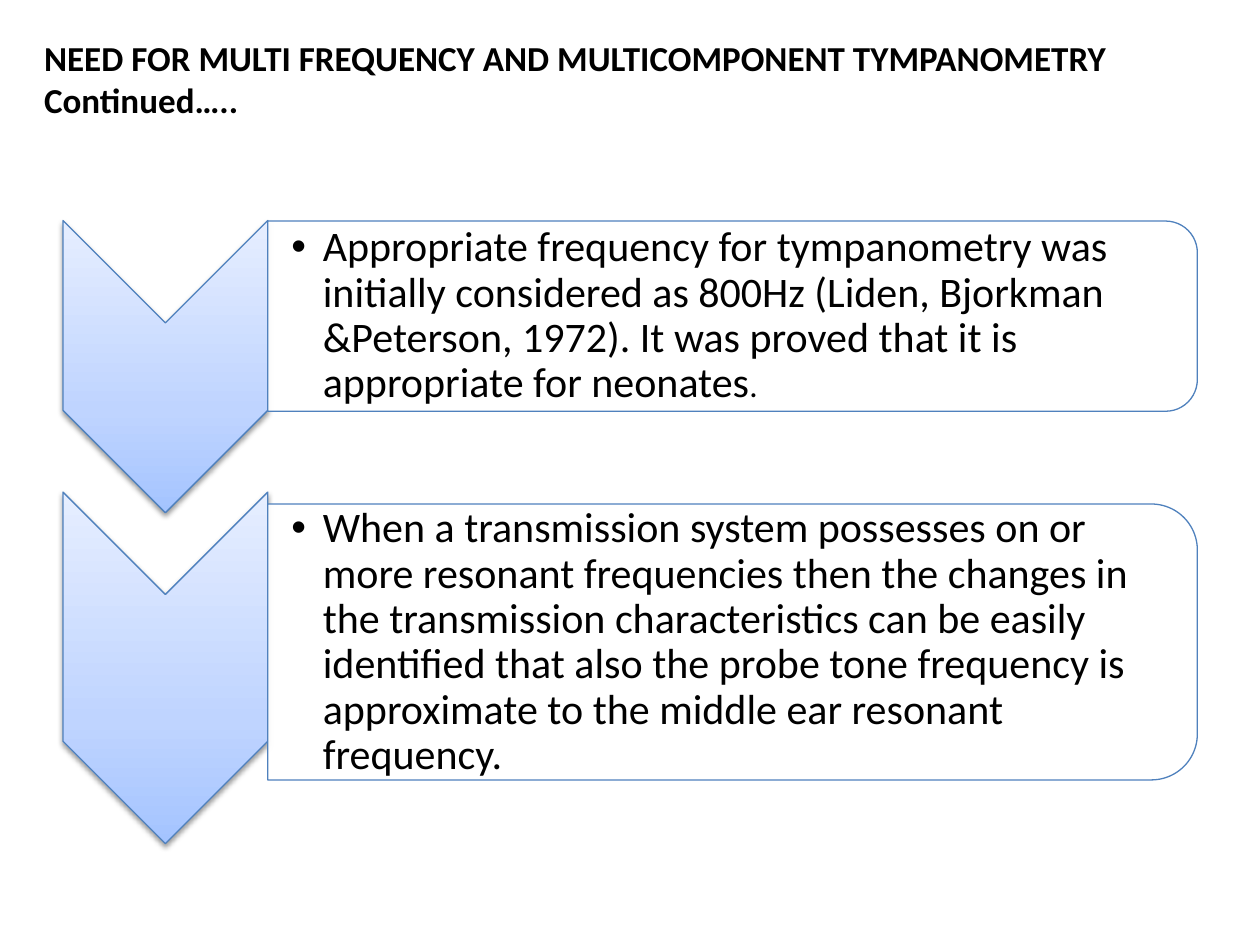
from dataclasses import dataclass

from lxml.etree import SubElement
from pptx import Presentation
from pptx.dml.color import RGBColor
from pptx.enum.shapes import MSO_SHAPE
from pptx.enum.text import MSO_ANCHOR, PP_ALIGN
from pptx.oxml import parse_xml
from pptx.oxml.ns import nsdecls, qn
from pptx.util import Pt

TITLE = "NEED FOR MULTI FREQUENCY AND MULTICOMPONENT TYMPANOMETRY \vContinued….."

# Each step: chevron (top, height), panel (top, height), text (top, width, height), runs
STEPS = [
    dict(chevron=(126, 167), panel=(126.3, 108.7), text=(131.76, 525.6, 97.92),
         runs=[("Appropriate frequency for tympanometry was initially considered as "
                "800Hz (Liden, Bjorkman &Peterson, 1972). It was proved that it is "
                "appropriate for neonates", 24), (".", 19)]),
    dict(chevron=(281.2, 200.9), panel=(288, 157.7), text=(295.92, 523.44, 142.56),
         runs=[("When a transmission system possesses on or more resonant frequencies "
                "then the changes in the transmission characteristics can be easily "
                "identified that also the probe tone frequency is approximate to the "
                "middle ear resonant frequency.", 24)]),
]

CHEVRON_LEFT, CHEVRON_WIDTH = 36, 117
PANEL_LEFT, PANEL_WIDTH = 153, 531.2


@dataclass(frozen=True)
class Theme:
    font: str = "Calibri"
    title_size: int = 20
    text: RGBColor = RGBColor(0, 0, 0)
    panel: RGBColor = RGBColor(255, 255, 255)
    outline: RGBColor = RGBColor(0x4F, 0x81, 0xBD)
    gradient: tuple = ((0, "A4C4FF"), (35, "BFD4FF"), (100, "E6EEFF"))


THEME = Theme()


def add_turned_shape(slide, kind, left, top, width, height):
    """Add a shape turned a quarter clockwise that covers the given box as seen."""
    shape = slide.shapes.add_shape(
        kind, Pt(left + (width - height) / 2), Pt(top + (height - width) / 2),
        Pt(height), Pt(width))
    shape.rotation = 90
    shape.shadow.inherit = False
    shape.line.color.rgb = THEME.outline
    shape.line.width = Pt(0.75)
    return shape


def add_chevron(slide, top, height):
    chevron = add_turned_shape(slide, MSO_SHAPE.CHEVRON,
                               CHEVRON_LEFT, top, CHEVRON_WIDTH, height)
    stops = "".join(f'<a:gs pos="{pos * 1000}"><a:srgbClr val="{color}"/></a:gs>'
                    for pos, color in THEME.gradient)
    properties = chevron.element.spPr
    properties.find(qn("a:prstGeom")).addnext(parse_xml(
        f'<a:gradFill {nsdecls("a")} rotWithShape="0"><a:gsLst>{stops}</a:gsLst>'
        '<a:lin ang="16200000" scaled="0"/></a:gradFill>'))
    properties.find(qn("a:effectLst")).append(parse_xml(
        f'<a:outerShdw {nsdecls("a")} blurRad="{Pt(3.1)}" dist="{Pt(1.6)}" '
        'dir="5400000" rotWithShape="0"><a:srgbClr val="000000">'
        '<a:alpha val="38000"/></a:srgbClr></a:outerShdw>'))


def add_panel(slide, top, height):
    panel = add_turned_shape(slide, MSO_SHAPE.ROUND_2_SAME_RECTANGLE,
                             PANEL_LEFT, top, PANEL_WIDTH, height)
    panel.fill.solid()
    panel.fill.fore_color.rgb = THEME.panel
    color = panel.element.spPr.find(qn("a:solidFill")).find(qn("a:srgbClr"))
    SubElement(color, qn("a:alpha"), val="90000")


def add_step_text(slide, top, width, height, runs):
    box = slide.shapes.add_textbox(Pt(PANEL_LEFT), Pt(top), Pt(width), Pt(height))
    frame = box.text_frame
    frame.word_wrap = True
    frame.vertical_anchor = MSO_ANCHOR.MIDDLE
    frame.margin_left = Pt(13.5)
    frame.margin_top = frame.margin_right = frame.margin_bottom = Pt(1.2)
    paragraph = frame.paragraphs[0]
    properties = paragraph._p.get_or_add_pPr()
    properties.set("marL", str(Pt(18)))
    properties.set("indent", str(Pt(-18)))
    SubElement(properties, qn("a:buFont"), typeface="Arial")
    SubElement(properties, qn("a:buChar"), char="•")
    paragraph.line_spacing = 0.9
    paragraph.font.name = THEME.font
    paragraph.font.color.rgb = THEME.text
    for words, size in runs:
        run = paragraph.add_run()
        run.text = words
        run.font.size = Pt(size)


def add_title(slide):
    title = slide.shapes.title
    title.left, title.top, title.width, title.height = Pt(18), Pt(0), Pt(648), Pt(90)
    title.text_frame.text = TITLE
    title.text_frame.vertical_anchor = MSO_ANCHOR.MIDDLE
    paragraph = title.text_frame.paragraphs[0]
    paragraph.alignment = PP_ALIGN.LEFT
    paragraph.font.name = THEME.font
    paragraph.font.size = Pt(THEME.title_size)
    paragraph.font.bold = True
    paragraph.font.color.rgb = THEME.text


def main():
    deck = Presentation()
    deck.slide_width, deck.slide_height = Pt(720), Pt(540)
    slide = deck.slides.add_slide(deck.slide_layouts[5])
    add_title(slide)
    for step in STEPS:
        add_chevron(slide, *step["chevron"])
        add_panel(slide, *step["panel"])
        add_step_text(slide, *step["text"], step["runs"])
    deck.save("out.pptx")


if __name__ == "__main__":
    main()
